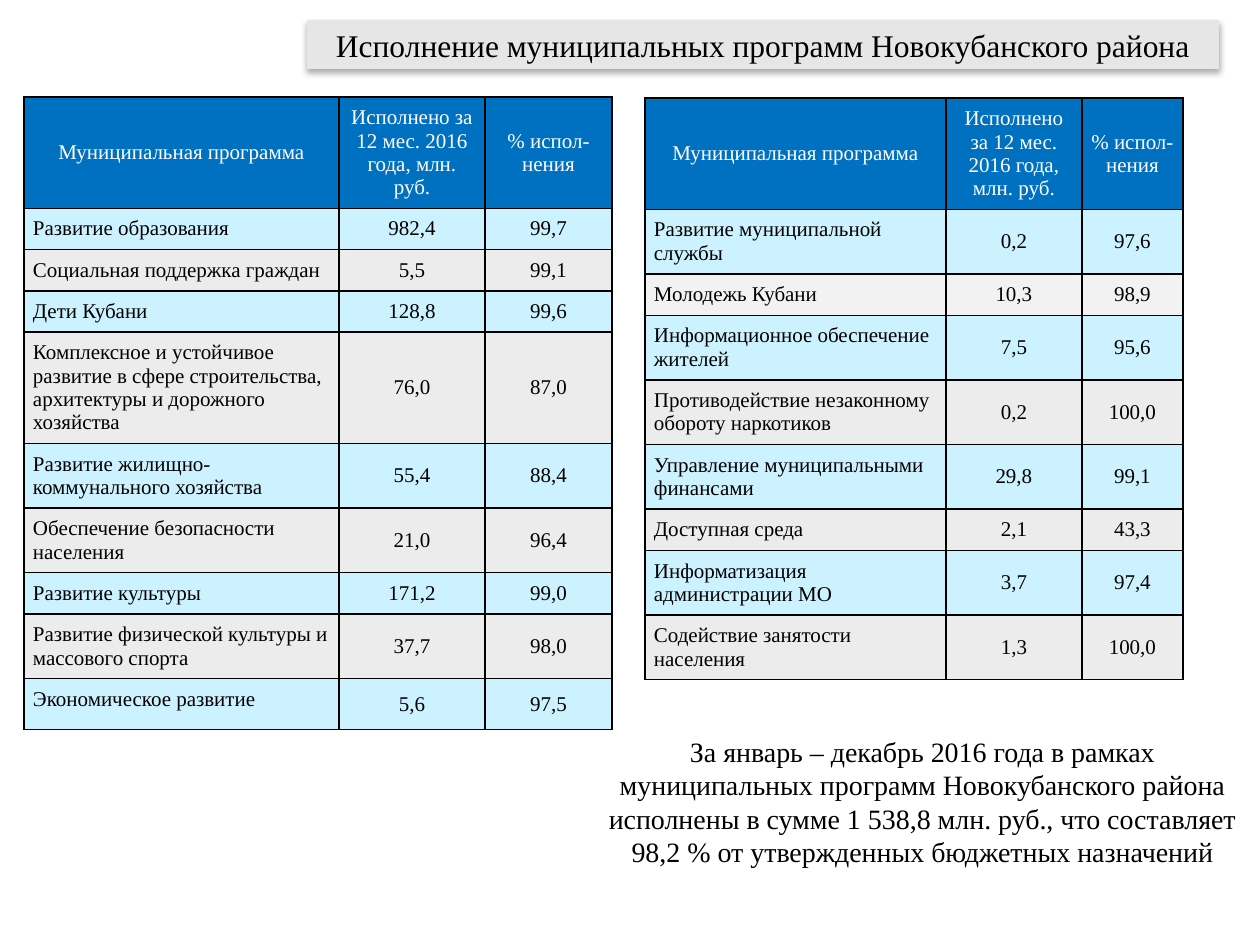
from lxml import etree
from pptx import Presentation
from pptx.dml.color import RGBColor
from pptx.enum.text import MSO_ANCHOR as Anchor, MSO_AUTO_SIZE as AutoSize, PP_ALIGN as Align
from pptx.oxml import parse_xml
from pptx.oxml.ns import nsdecls, qn
from pptx.util import Emu, Pt

TITLE = "Исполнение муниципальных программ Новокубанского района"
SUMMARY = ("За январь – декабрь 2016 года в рамках муниципальных программ "
           "Новокубанского района исполнены в сумме 1 538,8 млн. руб., "
           "что составляет 98,2 % от утвержденных бюджетных назначений")
HEADER = ("Муниципальная программа", "Исполнено за 12 мес. 2016 года, млн. руб.", "% испол-нения")

BLUE, SKY, GREY, PALE = "0070C0", "CDF2FF", "ECECEC", "F2F2F2"
HEADER_HEIGHT = 110

# Each row: programme, amount, percent, row height in px
RIGHT = {
    "at": (645, 98), "columns": (301, 136, 101), "fills": {2: PALE},
    "rows": [
        ("Развитие муниципальной службы", "0,2", "97,6", 64),
        ("Молодежь Кубани", "10,3", "98,9", 40),
        ("Информационное обеспечение жителей", "7,5", "95,6", 64),
        ("Противодействие незаконному обороту наркотиков", "0,2", "100,0", 64),
        ("Управление муниципальными финансами", "29,8", "99,1", 64),
        ("Доступная среда", "2,1", "43,3", 40),
        ("Информатизация администрации МО", "3,7", "97,4", 64),
        ("Содействие занятости населения", "1,3", "100,0", 64),
    ],
}
LEFT = {
    "at": (24, 97), "columns": (315, 146, 127), "fills": {},
    "rows": [
        ("Развитие образования", "982,4", "99,7", 40),
        ("Социальная поддержка граждан", "5,5", "99,1", 40),
        ("Дети Кубани", "128,8", "99,6", 40),
        ("Комплексное и устойчивое развитие в сфере строительства, "
         "архитектуры и дорожного хозяйства", "76,0", "87,0", 110),
        ("Развитие жилищно-коммунального хозяйства", "55,4", "88,4", 64),
        ("Обеспечение безопасности населения", "21,0", "96,4", 64),
        ("Развитие культуры", "171,2", "99,0", 40),
        ("Развитие физической культуры и массового спорта", "37,7", "98,0", 64),
        ("Экономическое развитие", "5,6", "97,5", 51),
    ],
}


def px(length):
    return Emu(round(length * 914400 / 126))


def color(value):
    return RGBColor.from_string(value)


def write(frame, text, size, ink="000000", align=Align.CENTER):
    frame.text = text
    paragraph = frame.paragraphs[0]
    paragraph.alignment = align
    paragraph.font.name = "Times New Roman"
    paragraph.font.size = Pt(size)
    paragraph.font.color.rgb = color(ink)


def add_borders(cell):
    """Draw a thin black line on all four sides, placed before the cell fill."""
    properties = cell._tc.get_or_add_tcPr()
    for position, side in enumerate(("lnL", "lnR", "lnT", "lnB")):
        line = etree.Element(qn(f"a:{side}"), w=str(Pt(1)))
        fill = etree.SubElement(line, qn("a:solidFill"))
        etree.SubElement(fill, qn("a:srgbClr"), val="000000")
        properties.insert(position, line)


def add_programmes(slide, programmes):
    rows = [(*HEADER, HEADER_HEIGHT), *programmes["rows"]]
    columns = programmes["columns"]
    total_height = sum(row[-1] for row in rows)
    table = slide.shapes.add_table(
        len(rows), len(columns), *map(px, (*programmes["at"], sum(columns), total_height))).table
    for column, width in zip(table.columns, columns):
        column.width = px(width)
    for r, (*texts, height) in enumerate(rows):
        table.rows[r].height = px(height)
        stripe = SKY if r % 2 else GREY
        fill = BLUE if r == 0 else programmes["fills"].get(r, stripe)
        for c, text in enumerate(texts):
            cell = table.cell(r, c)
            is_name = r > 0 and c == 0
            cell.margin_left = cell.margin_right = cell.margin_top = cell.margin_bottom = px(9)
            cell.vertical_anchor = Anchor.TOP if is_name else Anchor.MIDDLE
            write(cell.text_frame, text, 12, "000000" if r else "FFFFFF",
                  Align.LEFT if is_name else Align.CENTER)
            cell.fill.solid()
            cell.fill.fore_color.rgb = color(fill)
            add_borders(cell)


def add_title(slide):
    title = slide.shapes.title
    title.left, title.top, title.width, title.height = map(px, (307, 20, 912, 49))
    title.fill.solid()
    title.fill.fore_color.rgb = color("E6E6E6")
    title._element.spPr.append(parse_xml(
        f'<a:effectLst {nsdecls("a")}>'
        f'<a:outerShdw blurRad="{Pt(3.5)}" dist="{Pt(2.2)}" dir="5400000" rotWithShape="0">'
        '<a:srgbClr val="000000"><a:alpha val="32000"/></a:srgbClr>'
        '</a:outerShdw></a:effectLst>'))
    frame = title.text_frame
    frame.auto_size = AutoSize.NONE
    frame.vertical_anchor = Anchor.MIDDLE
    write(frame, TITLE, 18)


def main():
    deck = Presentation()
    deck.slide_width, deck.slide_height = px(1260), px(945)
    slide = deck.slides.add_slide(deck.slide_layouts[5])
    add_title(slide)
    for programmes in (RIGHT, LEFT):
        add_programmes(slide, programmes)
    summary = slide.shapes.add_textbox(*map(px, (585, 728, 675, 149))).text_frame
    summary.word_wrap = True
    summary.auto_size = AutoSize.SHAPE_TO_FIT_TEXT
    write(summary, SUMMARY, 16)
    deck.save("out.pptx")


if __name__ == "__main__":
    main()
